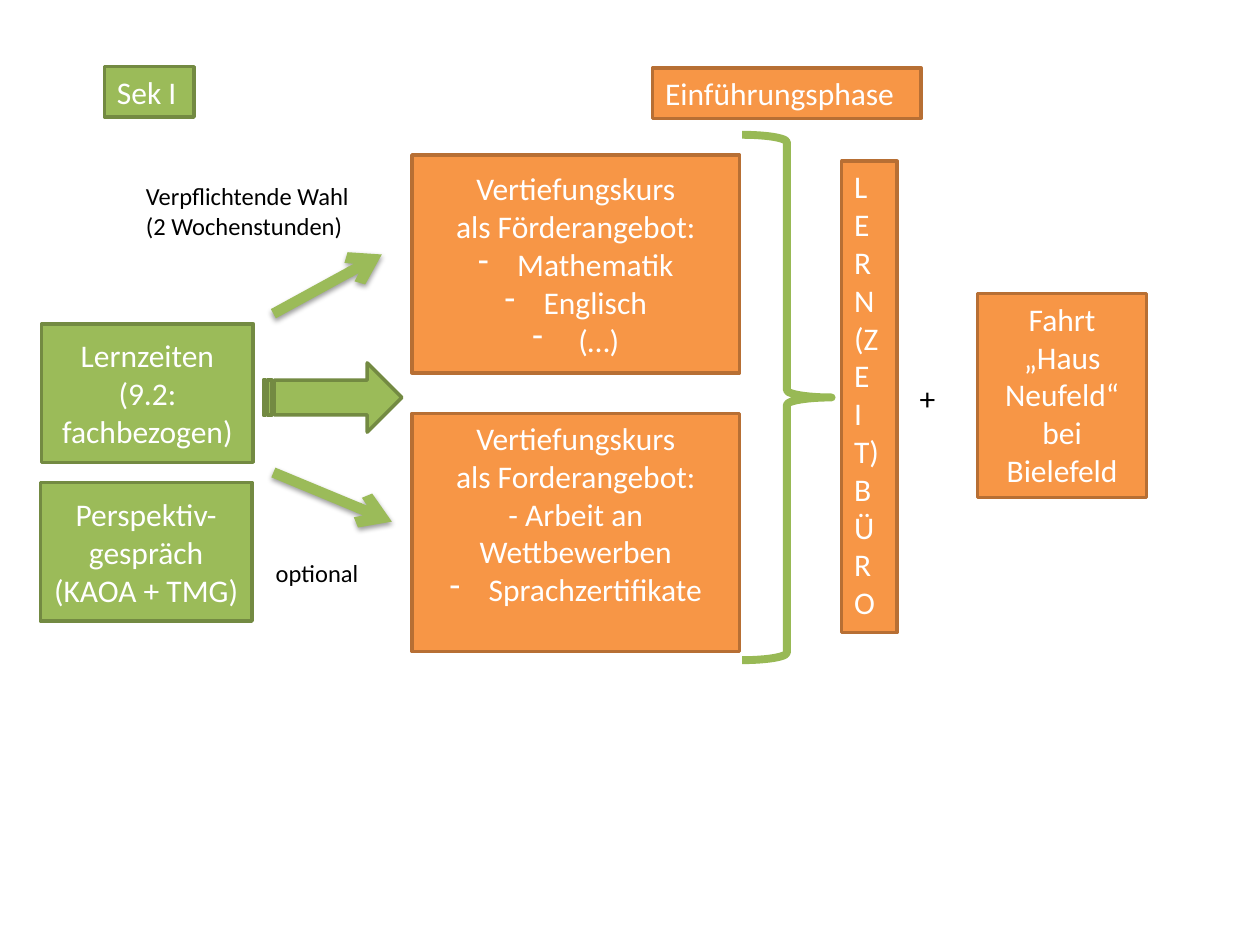
"""Build the slide on courses leading from Sek I into the Einführungsphase."""
from dataclasses import dataclass
from typing import Optional

from lxml.etree import SubElement
from pptx import Presentation
from pptx.dml.color import RGBColor
from pptx.enum.shapes import MSO_CONNECTOR as Connector, MSO_SHAPE as Shape
from pptx.enum.text import MSO_ANCHOR as Anchor, MSO_AUTO_SIZE as AutoSize, PP_ALIGN as Align
from pptx.oxml.ns import qn
from pptx.util import Inches, Pt

GREEN, GREEN_EDGE = RGBColor(0x9B, 0xBB, 0x59), RGBColor(0x73, 0x8A, 0x42)
ORANGE, ORANGE_EDGE = RGBColor(0xF7, 0x96, 0x46), RGBColor(0xB7, 0x6F, 0x34)
BRACE_GREEN = RGBColor(0x98, 0xB9, 0x55)
WHITE, BLACK = RGBColor(0xFF, 0xFF, 0xFF), RGBColor(0x00, 0x00, 0x00)
FONT = "Calibri"
HANGING = Inches(0.31)


@dataclass(frozen=True)
class Line:
    text: str
    bullet: bool = False


@dataclass(frozen=True)
class Box:
    at: tuple[float, float, float, float]
    lines: tuple[Line, ...]
    fill: RGBColor
    edge: RGBColor
    centred: bool = True
    grows: bool = False
    bottom_inset: float = 0.05


@dataclass(frozen=True)
class Label:
    at: tuple[float, float, float, float]
    lines: tuple[Line, ...]
    size: int = 14


@dataclass(frozen=True)
class Arrow:
    start: tuple[float, float]
    end: tuple[float, float]


def plain(*texts: str) -> tuple[Line, ...]:
    return tuple(Line(text) for text in texts)


def dashed(*texts: str) -> tuple[Line, ...]:
    return tuple(Line(text, bullet=True) for text in texts)


BOXES = (
    Box((0.33, 2.57, 1.68, 1.1), plain("Lernzeiten (9.2: fachbezogen)"), GREEN, GREEN_EDGE),
    Box((0.32, 3.83, 1.68, 1.1), plain("Perspektiv-gespräch", "(KAOA + TMG)"), GREEN, GREEN_EDGE),
    Box((0.83, 0.53, 0.71, 0.4), plain("Sek I"), GREEN, GREEN_EDGE, centred=False, grows=True),
    Box((3.27, 1.23, 2.6, 1.73),
        plain("Vertiefungskurs", "als Förderangebot:") + dashed("Mathematik", "Englisch", " (…)"),
        ORANGE, ORANGE_EDGE),
    Box((3.27, 3.28, 2.6, 1.89),
        plain("Vertiefungskurs", "als Forderangebot:", "- Arbeit an Wettbewerben")
        + dashed("Sprachzertifikate"),
        ORANGE, ORANGE_EDGE, bottom_inset=0.35),
    Box((5.18, 0.54, 2.13, 0.4), plain("Einführungsphase"),
        ORANGE, ORANGE_EDGE, centred=False, grows=True),
    Box((7.76, 2.33, 1.34, 1.62), plain("Fahrt „Haus Neufeld“ bei Bielefeld"),
        ORANGE, ORANGE_EDGE, grows=True),
    Box((6.68, 1.28, 0.44, 3.74), plain("L", "ERN", "(Z", "E", "I", "T)", "BÜRO"),
        ORANGE, ORANGE_EDGE, centred=False, grows=True),
)
LABELS = (
    Label((1.06, 1.39, 1.88, 0.57), plain("Verpflichtende Wahl", "(2 Wochenstunden)")),
    Label((2.09, 4.38, 0.87, 0.34), plain("optional")),
    Label((7.2, 2.96, 0.33, 0.4), plain("+"), size=18),
)
ARROWS = (Arrow((2.17, 2.49), (3.03, 2.02)), Arrow((2.17, 3.75), (3.11, 4.14)))


def write_lines(frame, lines: tuple[Line, ...], size: int, color: RGBColor, align: Align) -> None:
    for index, line in enumerate(lines):
        para = frame.add_paragraph() if index else frame.paragraphs[0]
        para.alignment = align
        if line.bullet:
            props = para._p.get_or_add_pPr()
            props.set("marL", str(HANGING))
            props.set("indent", str(-HANGING))
            SubElement(props, qn("a:buFontTx"))
            SubElement(props, qn("a:buChar"), char="-")
        span = para.add_run()
        span.text = line.text
        span.font.name, span.font.size = FONT, Pt(size)
        span.font.color.rgb = color


def draw_shape(page, kind: Shape, at: tuple[float, ...], fill: Optional[RGBColor],
               edge: RGBColor, width: float = 2):
    shape = page.shapes.add_shape(kind, *map(Inches, at))
    shape.shadow.inherit = False
    if fill is None:
        shape.fill.background()
    else:
        shape.fill.solid()
        shape.fill.fore_color.rgb = fill
    shape.line.color.rgb = edge
    shape.line.width = Pt(width)
    return shape


def draw_box(page, box: Box) -> None:
    frame = draw_shape(page, Shape.RECTANGLE, box.at, box.fill, box.edge).text_frame
    frame.word_wrap = True
    frame.auto_size = AutoSize.SHAPE_TO_FIT_TEXT if box.grows else AutoSize.NONE
    frame.vertical_anchor = Anchor.TOP if box.grows else Anchor.MIDDLE
    frame.margin_bottom = Inches(box.bottom_inset)
    write_lines(frame, box.lines, 18, WHITE, Align.CENTER if box.centred else Align.LEFT)


def draw_label(page, label: Label) -> None:
    frame = page.shapes.add_textbox(*map(Inches, label.at)).text_frame
    frame.word_wrap = False
    frame.auto_size = AutoSize.SHAPE_TO_FIT_TEXT
    write_lines(frame, label.lines, label.size, BLACK, Align.LEFT)


def draw_arrow(page, arrow: Arrow) -> None:
    ends = map(Inches, arrow.start + arrow.end)
    connector = page.shapes.add_connector(Connector.STRAIGHT, *ends)
    connector.line.color.rgb = GREEN
    connector.line.width = Pt(6)
    SubElement(connector.line._get_or_add_ln(), qn("a:tailEnd"), type="arrow")
    effects = SubElement(connector._element.spPr, qn("a:effectLst"))
    shadow = SubElement(effects, qn("a:outerShdw"), blurRad=str(Pt(3.1)), dist=str(Pt(1.6)),
                        dir="5400000", rotWithShape="0")
    color = SubElement(shadow, qn("a:srgbClr"), val=str(BLACK))
    SubElement(color, qn("a:alpha"), val="38000")


def main() -> None:
    deck = Presentation()
    deck.slide_width, deck.slide_height = Inches(10), Inches(7.5)
    page = deck.slides.add_slide(deck.slide_layouts[6])
    for box in BOXES:
        draw_box(page, box)
    for label in LABELS:
        draw_label(page, label)
    for arrow in ARROWS:
        draw_arrow(page, arrow)
    draw_shape(page, Shape.STRIPED_RIGHT_ARROW, (2.09, 2.88, 1.1, 0.55), GREEN, GREEN_EDGE)
    draw_shape(page, Shape.RIGHT_BRACE, (5.89, 1.07, 0.71, 4.17), None, BRACE_GREEN, 4.5)
    deck.save("out.pptx")


if __name__ == "__main__":
    main()
